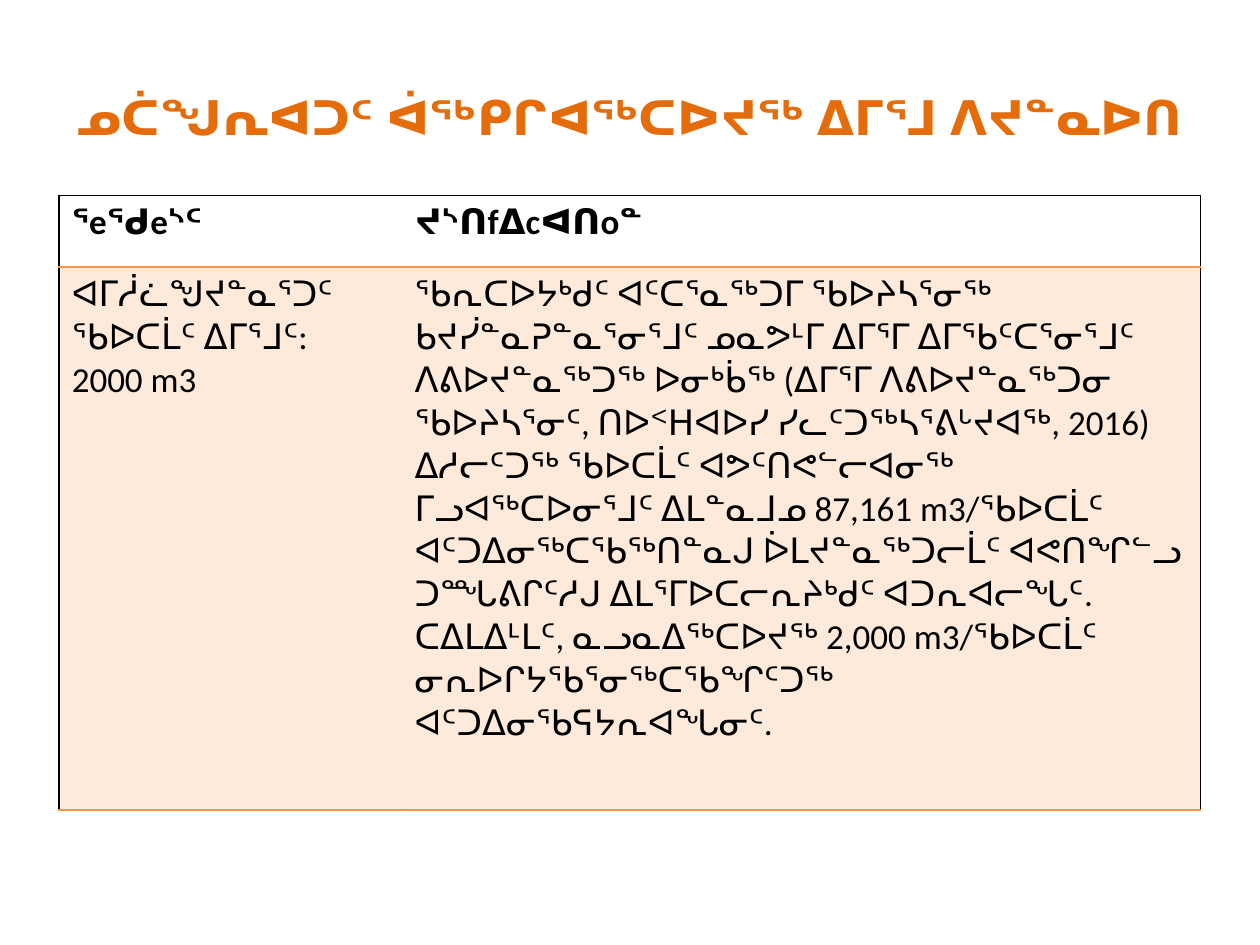
from dataclasses import dataclass

from lxml import etree
from pptx import Presentation
from pptx.dml.color import RGBColor
from pptx.enum.text import MSO_ANCHOR, PP_ALIGN
from pptx.oxml.ns import qn
from pptx.util import Inches, Pt

CENTER, LEFT = PP_ALIGN.CENTER, PP_ALIGN.LEFT
MIDDLE = MSO_ANCHOR.MIDDLE
NO_STYLE = "{2D5ABB26-0587-4C30-8999-92F81FD0307C}"
TITLE_LAYOUT = 5


@dataclass(frozen=True)
class Theme:
    title_font: str = "Arial"
    body_font: str = "Calibri"
    title_size: float = 27.3
    body_size: float = 20
    title_color: str = "E46C0A"
    ink: str = "000000"
    accent: str = "F79646"
    tint: int = 20  # opacity of the body cells, percent


def write(tf, text, *, font, size, color, bold=False, align=LEFT):
    """Fill a text frame, one paragraph per line of text."""
    for i, line in enumerate(text.split("\n")):
        p = tf.paragraphs[0] if i == 0 else tf.add_paragraph()
        p.alignment = align
        r = p.add_run()
        r.text = line
        r.font.name, r.font.size, r.font.bold = font, Pt(size), bold
        r.font.color.rgb = RGBColor.from_string(color)


class SlideBuilder:
    def __init__(self, prs, theme):
        self.theme = theme
        self.s = prs.slides.add_slide(prs.slide_layouts[TITLE_LAYOUT])

    def title(self, text, left, top, width, height):
        t, sp = self.theme, self.s.shapes.title
        sp.left, sp.top = Inches(left), Inches(top)
        sp.width, sp.height = Inches(width), Inches(height)
        sp.text_frame.word_wrap = True
        sp.text_frame.vertical_anchor = MIDDLE
        write(sp.text_frame, text, font=t.title_font, size=t.title_size,
              color=t.title_color, bold=True, align=CENTER)

    def border(self, cell, side, color):
        ln = etree.SubElement(cell._tc.get_or_add_tcPr(), qn(f"a:ln{side}"), w=str(Pt(1)))
        if color is None:
            etree.SubElement(ln, qn("a:noFill"))
        else:
            fill = etree.SubElement(ln, qn("a:solidFill"))
            etree.SubElement(fill, qn("a:srgbClr"), val=color)

    def tint(self, cell):
        cell.fill.solid()
        cell.fill.fore_color.rgb = RGBColor.from_string(self.theme.accent)
        clr = cell._tc.tcPr.find(qn("a:solidFill")).find(qn("a:srgbClr"))
        etree.SubElement(clr, qn("a:alpha"), val=str(self.theme.tint * 1000))

    def table(self, data, left, top, col_widths, row_heights):
        t = self.theme
        frame = self.s.shapes.add_table(
            len(data), len(data[0]), Inches(left), Inches(top),
            Inches(sum(col_widths)), Inches(sum(row_heights)))
        table = frame.table
        table.horz_banding = False
        table._tbl.tblPr.find(qn("a:tableStyleId")).text = NO_STYLE
        for col, width in zip(table.columns, col_widths):
            col.width = Inches(width)
        for row, height in zip(table.rows, row_heights):
            row.height = Inches(height)

        last = len(col_widths) - 1
        for i, texts in enumerate(data):
            for j, text in enumerate(texts):
                cell, header = table.cell(i, j), i == 0
                write(cell.text_frame, text, font=t.body_font, size=t.body_size,
                      color=t.ink, bold=header)
                # Black outer frame, accent rule under each row
                self.border(cell, "L", t.ink if j == 0 else None)
                self.border(cell, "R", t.ink if j == last else None)
                self.border(cell, "T", t.ink if header else t.accent)
                self.border(cell, "B", t.accent)
                if header:
                    cell.fill.background()
                else:
                    self.tint(cell)


HEADER = ("ᕐeᖁeᔅᑦ", "ᔪᔅᑎfᐃcᐊᑎoᓐ")
REQUEST = "ᐊᒥᓲᓛᖑᔪᓐᓇᕐᑐᑦ ᖃᐅᑕᒫᑦ ᐃᒥᕐᒧᑦ:\n2000 m3"
JUSTIFICATION = (
    "ᖃᕆᑕᐅᔭᒃᑯᑦ ᐊᑦᑕᕐᓇᖅᑐᒥ ᖃᐅᔨᓴᕐᓂᖅ ᑲᔪᓰᓐᓇᕈᓐᓇᕐᓂᕐᒧᑦ ᓄᓇᕗᒻᒥ ᐃᒥᕐᒥ ᐃᒥᖃᑦᑕᕐᓂᕐᒧᑦ "
    "ᐱᕕᐅᔪᓐᓇᖅᑐᖅ ᐅᓂᒃᑳᖅ (ᐃᒥᕐᒥ ᐱᕕᐅᔪᓐᓇᖅᑐᓂ ᖃᐅᔨᓴᕐᓂᑦ, ᑎᐅᑉᕼᐊᐅᓯ "
    "ᓯᓚᑦᑐᖅᓴᕐᕕᒡᔪᐊᖅ, 2016) ᐃᓱᓕᑦᑐᖅ ᖃᐅᑕᒫᑦ ᐊᕗᑦᑎᕙᓪᓕᐊᓂᖅ ᒥᓗᐊᖅᑕᐅᓂᕐᒧᑦ "
    "ᐃᒪᓐᓇᒧᓄ 87,161 m3/ᖃᐅᑕᒫᑦ ᐊᑦᑐᐃᓂᖅᑕᖃᖅᑎᓐᓇᒍ ᐆᒪᔪᓐᓇᖅᑐᓕᒫᑦ ᐊᕙᑎᖏᓪᓗ "
    "ᑐᙵᕕᒋᑦᓱᒍ ᐃᒪᕐᒥᐅᑕᓕᕆᔨᒃᑯᑦ ᐊᑐᕆᐊᓕᖓᑦ. ᑕᐃᒪᐃᒻᒪᑦ, ᓇᓗᓇᐃᖅᑕᐅᔪᖅ "
    "2,000 m3/ᖃᐅᑕᒫᑦ ᓂᕆᐅᒋᔭᖃᕐᓂᖅᑕᖃᖏᑦᑐᖅ ᐊᑦᑐᐃᓂᖃᕋᔭᕆᐊᖓᓂᑦ."
)


def main():
    prs = Presentation()
    prs.slide_width, prs.slide_height = Inches(10), Inches(7.5)
    slide = SlideBuilder(prs, Theme())
    slide.title("ᓄᑖᖑᕆᐊᑐᑦ ᐋᖅᑭᒋᐊᖅᑕᐅᔪᖅ ᐃᒥᕐᒧ ᐱᔪᓐᓇᐅᑎ", 0, 0.3, 10, 1.25)
    slide.table([HEADER, (REQUEST, JUSTIFICATION)], 0.47, 1.55,
                col_widths=(2.72, 6.34), row_heights=(0.57, 4.31))
    prs.save("out.pptx")


if __name__ == "__main__":
    main()
